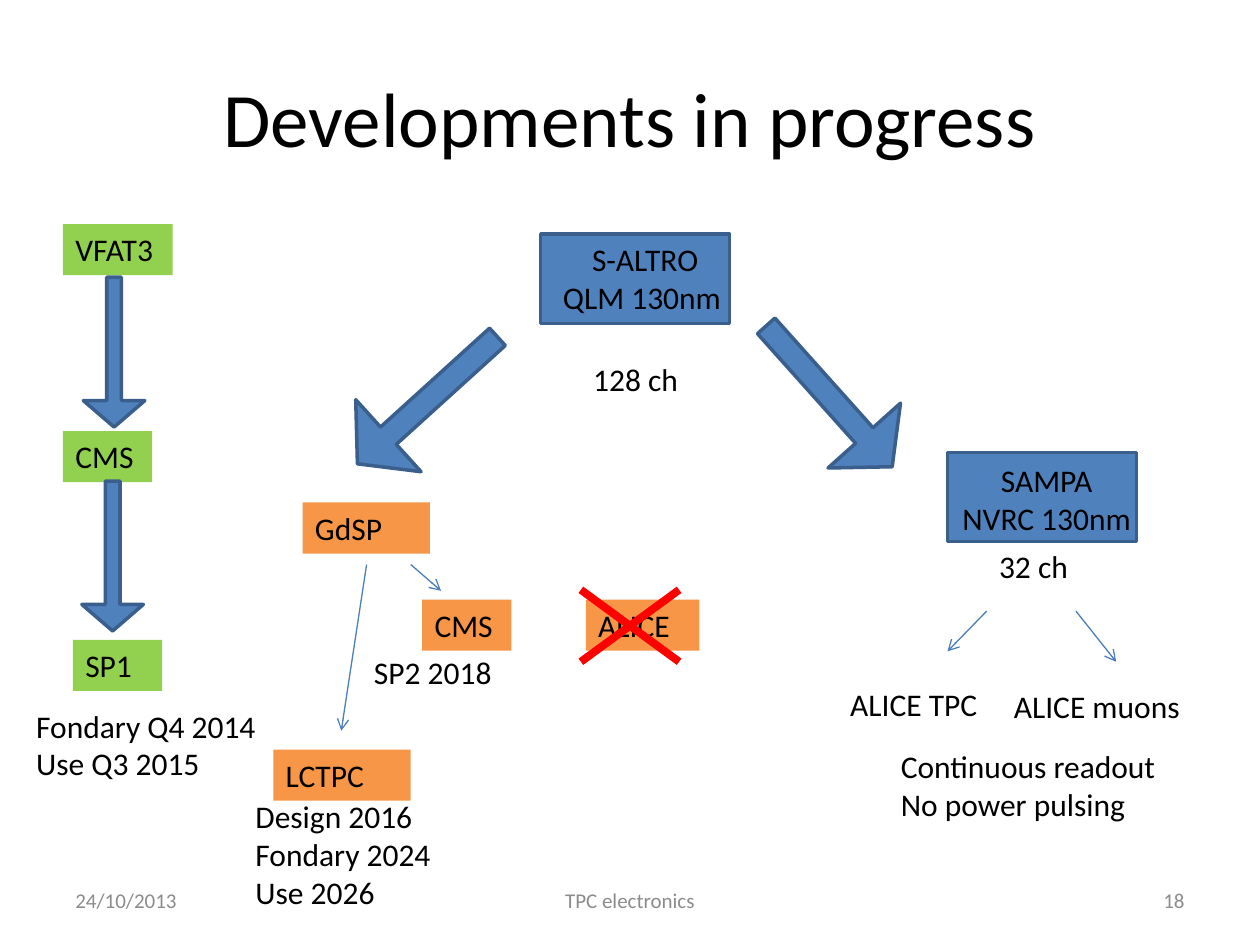
import pptx
import pptx.dml.color
import pptx.enum.shapes
import pptx.enum.text
import pptx.oxml
import pptx.oxml.ns
import pptx.util

Cm = pptx.util.Cm
Pt = pptx.util.Pt
ALIGN = pptx.enum.text.PP_ALIGN
ANCHOR = pptx.enum.text.MSO_ANCHOR
SHAPE = pptx.enum.shapes.MSO_SHAPE

COLOURS = {
    "text": "000000",
    "footer": "8C8C8C",
    "chip": "4F81BD",
    "chip_edge": "3A5F8C",
    "arrow": "4B7EBC",
    "green": "92D050",
    "orange": "F79646",
    "cross": "FF0000",
}


class DevelopmentSlide:
    font = "Calibri"
    body_size = 18

    def __init__(self, deck):
        self.slide = deck.slides.add_slide(deck.slide_layouts[5])

    def colour(self, name):
        return pptx.dml.color.RGBColor.from_string(COLOURS[name])

    def text_height(self, lines):
        """Height in cm of a box that just holds the lines at body size."""
        return 0.26 + 0.77 * len(lines)

    def set_text(self, frame, lines, aligns=(ALIGN.LEFT,), size=body_size,
                 colour="text", anchor=ANCHOR.TOP):
        """Fill the frame; the last alignment serves all further lines."""
        frame.word_wrap = True
        frame.vertical_anchor = anchor
        frame.text = "\n".join(lines)
        for i, paragraph in enumerate(frame.paragraphs):
            paragraph.alignment = aligns[min(i, len(aligns) - 1)]
            paragraph.font.name = self.font
            paragraph.font.size = Pt(size)
            paragraph.font.color.rgb = self.colour(colour)

    def title(self, wording):
        title = self.slide.shapes.title
        title.left, title.top = Cm(1.27), Cm(0.76)
        title.width, title.height = Cm(22.86), Cm(3.18)
        self.set_text(title.text_frame, [wording], (ALIGN.CENTER,), 44,
                      anchor=ANCHOR.MIDDLE)

    def label(self, x, y, width, *lines, aligns=(ALIGN.LEFT,)):
        box = self.slide.shapes.add_textbox(
            Cm(x), Cm(y), Cm(width), Cm(self.text_height(lines)))
        self.set_text(box.text_frame, lines, aligns)

    def footer(self, x, width, wording, align):
        box = self.slide.shapes.add_textbox(Cm(x), Cm(17.65), Cm(width), Cm(1.01))
        self.set_text(box.text_frame, [wording], (align,), 12, "footer",
                      ANCHOR.MIDDLE)

    def block(self, kind, x, y, width, height, fill, edge=None):
        block = self.slide.shapes.add_shape(kind, Cm(x), Cm(y), Cm(width), Cm(height))
        block.shadow.inherit = False
        block.fill.solid()
        block.fill.fore_color.rgb = self.colour(fill)
        if edge:
            block.line.color.rgb = self.colour(edge)
            block.line.width = Pt(2)
        else:
            block.line.fill.background()
        return block

    def chip(self, x, y):
        self.block(SHAPE.RECTANGLE, x, y, 3.81, 1.8, "chip", "chip_edge")

    def tag(self, x, y, width, wording, fill):
        tag = self.block(SHAPE.RECTANGLE, x, y, width,
                         self.text_height([wording]), fill)
        self.set_text(tag.text_frame, [wording])

    def block_arrow(self, x, y, width, height, rotation):
        arrow = self.block(SHAPE.RIGHT_ARROW, x, y, width, height,
                           "chip", "chip_edge")
        arrow.rotation = rotation
        arrow.adjustments[0] = 0.24
        arrow.adjustments[1] = 0.43

    def line(self, start, end, colour="arrow", width=0.75, head=True):
        line = self.slide.shapes.add_connector(
            pptx.enum.shapes.MSO_CONNECTOR.STRAIGHT,
            *(Cm(value) for value in (*start, *end)))
        line.line.color.rgb = self.colour(colour)
        line.line.width = Pt(width)
        namespace = pptx.oxml.ns.nsdecls("a")
        properties = line.element.spPr
        if head:
            properties.get_or_add_ln().append(
                pptx.oxml.parse_xml(f'<a:tailEnd {namespace} type="arrow"/>'))
        properties.append(pptx.oxml.parse_xml(f"<a:effectLst {namespace}/>"))


def main():
    deck = pptx.Presentation()
    deck.slide_width, deck.slide_height = Cm(25.4), Cm(19.05)
    page = DevelopmentSlide(deck)
    page.title("Developments in progress")

    # S-ALTRO and its two successors
    page.chip(10.9, 4.72)
    page.label(11.1, 4.72, 3.81, "S-ALTRO", "QLM 130nm",
               aligns=(ALIGN.CENTER, ALIGN.LEFT))
    page.label(11.71, 7.14, 2.59, "128 ch")
    page.block_arrow(6.71, 7.09, 3.81, 1.96, 137.8)
    page.block_arrow(14.81, 7.01, 3.81, 1.96, 48.2)

    # SAMPA branch
    page.chip(19.1, 9.12)
    page.label(18.8, 9.17, 4.6, "SAMPA", "NVRC 130nm", aligns=(ALIGN.CENTER,))
    page.label(19.89, 10.9, 2.59, "32 ch")
    page.line((19.89, 12.32), (19.1, 13.13))
    page.line((21.69, 12.32), (22.5, 13.34))
    page.label(16.89, 13.69, 4.09, "ALICE TPC")
    page.label(20.19, 13.72, 4.09, "ALICE muons")
    page.label(17.91, 14.94, 7.01, "Continuous readout", "No power pulsing")

    # VFAT3 branch
    page.tag(1.27, 4.52, 2.21, "VFAT3", "green")
    page.tag(1.27, 8.69, 1.8, "CMS", "green")
    page.tag(1.47, 12.9, 1.8, "SP1", "green")
    page.block_arrow(0.79, 6.48, 3.02, 1.24, 90)
    page.block_arrow(0.76, 10.59, 3.02, 1.24, 90)
    page.label(0.48, 14.12, 5.41, "Fondary Q4 2014", "Use Q3 2015")

    # GdSP branch
    page.tag(6.1, 10.13, 2.57, "GdSP", "orange")
    page.tag(8.51, 12.09, 1.8, "CMS", "orange")
    page.tag(5.51, 15.11, 2.77, "LCTPC", "orange")
    page.tag(11.81, 12.09, 2.29, "ALICE", "orange")
    page.label(7.29, 13.03, 3.2, "SP2 2018")
    page.label(4.9, 15.95, 4.42, "Design 2016", "Fondary 2024", "Use 2026")
    page.line((7.39, 11.38), (6.88, 14.73))
    page.line((8.28, 11.38), (8.89, 11.91))

    # ALICE is crossed out
    left, right, top, bottom = 11.71, 13.69, 11.89, 13.34
    page.line((left, top), (right, bottom), "cross", 4.5, head=False)
    page.line((left, bottom), (right, top), "cross", 4.5, head=False)

    page.footer(1.27, 5.93, "24/10/2013", ALIGN.LEFT)
    page.footer(8.68, 8.04, "TPC electronics", ALIGN.CENTER)
    page.footer(18.2, 5.93, "18", ALIGN.RIGHT)
    deck.save("out.pptx")


if __name__ == "__main__":
    main()
